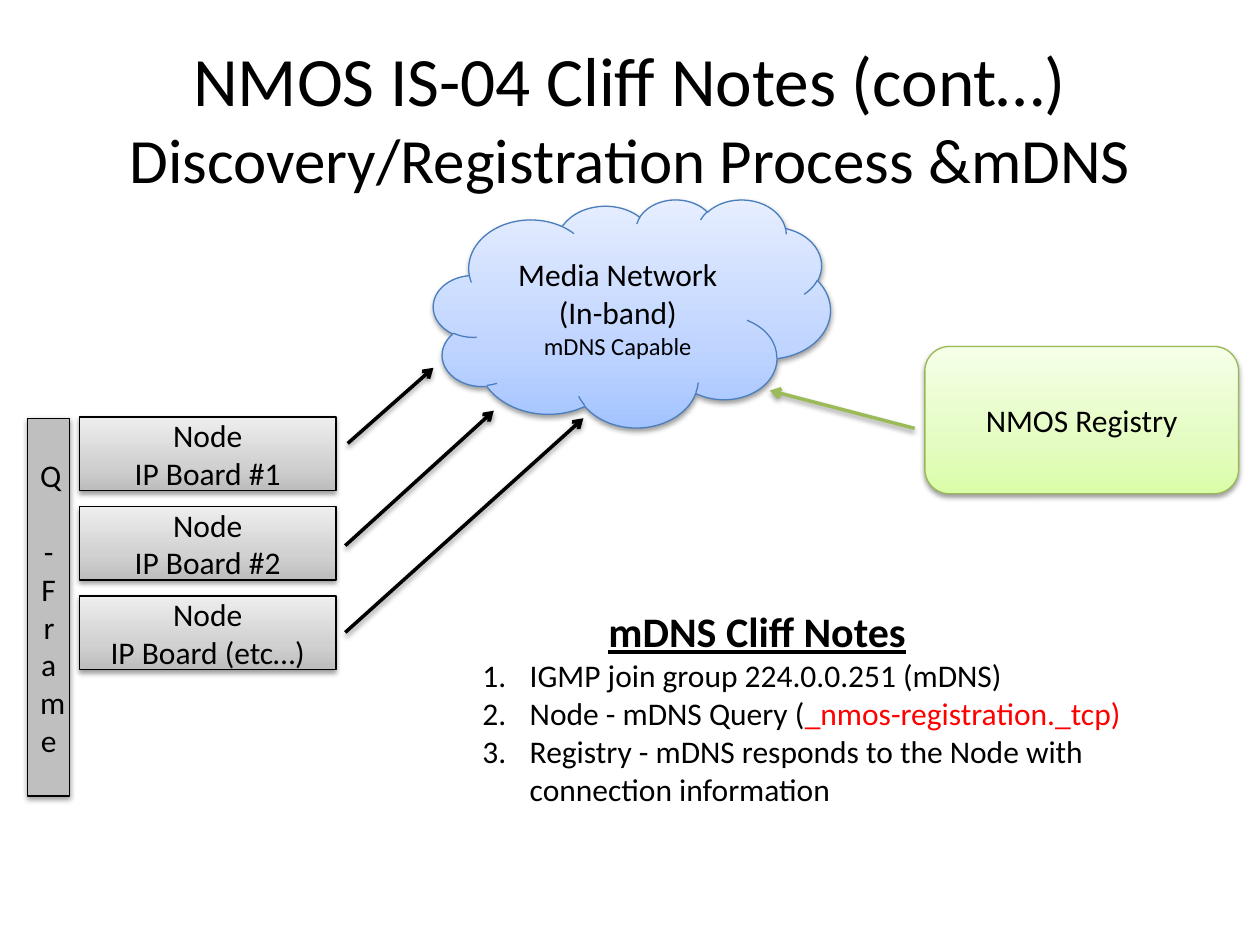
from pptx import Presentation
from pptx.dml.color import RGBColor
from pptx.enum.shapes import MSO_CONNECTOR, MSO_SHAPE as Shape
from pptx.enum.text import MSO_ANCHOR as Anchor, PP_ALIGN as Align
from pptx.oxml import parse_xml
from pptx.oxml.ns import nsdecls, qn
from pptx.util import Pt

FONT = "Calibri"
COLORS = {
    "text": "000000", "service": "FF0000", "frame": "BFBFBF",
    "node line": "000000", "network line": "4B7EBC",
    "registry line": "98B955", "registry arrow": "9BBB59",
}
# Gradient colours from bottom to top, at 0, 35 and 100 percent
GRADIENTS = {
    "node": ("BDBDBD", "D1D1D1", "EEEEEE"),
    "network": ("A4C4FF", "BFD4FF", "E6EEFF"),
    "registry": ("DAFDA7", "E4FCC2", "F5FFE7"),
}
STOPS = (0, 35, 100)

TITLE = [("NMOS IS-04 Cliff Notes (cont…)", 39.6),
         ("Discovery/Registration Process &mDNS", 36)]
FRAME = [("Q", 18), ("-Frame", 18)]
NODES = ["IP Board #1", "IP Board #2", "IP Board (etc…)"]
NETWORK = [("Media Network", 18), ("(In-band)", 18), ("mDNS Capable", 14)]
REGISTRY = [("NMOS Registry", 18)]
NOTES_HEADING = "mDNS Cliff Notes"
NOTES = [
    [("IGMP join group 224.0.0.251 (mDNS)", "text")],
    [("Node - mDNS Query (", "text"), ("_nmos-registration._tcp)", "service")],
    [("Registry - mDNS responds to the Node with connection information", "text")],
]
# Start x, start y, end x, end y, colour
ARROWS = [
    (198.7, 253.4, 247.7, 210.2, "node line"),
    (197.3, 311.8, 282.2, 234.7, "node line"),
    (197.3, 361.4, 333.4, 239, "node line"),
    (522.7, 244.8, 439.9, 223.2, "registry arrow"),
]
NODE_TOP, NODE_PITCH = 238.4, 51.1
NOTE_INDENT, HEADING_INDENT = 27, 72


def rgb(name):
    return RGBColor.from_string(COLORS[name])


def style_run(run, size, color="text"):
    run.font.name = FONT
    run.font.size = Pt(size)
    run.font.color.rgb = rgb(color)


def write_lines(frame, lines):
    """Write centred (text, size) lines, one paragraph each."""
    frame.word_wrap = True
    frame.vertical_anchor = Anchor.MIDDLE
    frame.text = "\n".join(text for text, _ in lines)
    for paragraph, (_, size) in zip(frame.paragraphs, lines):
        paragraph.alignment = Align.CENTER
        style_run(paragraph.runs[0], size)


def add_shadow(properties):
    for old in properties.findall(qn("a:effectLst")):
        properties.remove(old)
    properties.append(parse_xml(
        f'<a:effectLst {nsdecls("a")}><a:outerShdw blurRad="{Pt(3.1)}" '
        f'dist="{Pt(1.6)}" dir="5400000" rotWithShape="0"><a:srgbClr val="000000">'
        '<a:alpha val="38000"/></a:srgbClr></a:outerShdw></a:effectLst>'))


def gradient_fill(shape, gradient):
    stops = "".join(
        f'<a:gs pos="{stop * 1000}"><a:srgbClr val="{color}"/></a:gs>'
        for stop, color in zip(STOPS, GRADIENTS[gradient]))
    geometry = shape._element.spPr.find(qn("a:prstGeom"))
    geometry.addnext(parse_xml(
        f'<a:gradFill {nsdecls("a")} rotWithShape="1"><a:gsLst>{stops}</a:gsLst>'
        '<a:lin ang="16200000" scaled="0"/></a:gradFill>'))


def add_block(slide, kind, box, lines, line, gradient=None):
    block = slide.shapes.add_shape(kind, *map(Pt, box))
    if gradient:
        gradient_fill(block, gradient)
    else:
        block.fill.solid()
        block.fill.fore_color.rgb = rgb("frame")
    block.line.color.rgb = rgb(line)
    block.line.width = Pt(0.75)
    block.shadow.inherit = False
    add_shadow(block._element.spPr)
    write_lines(block.text_frame, lines)
    return block


def add_arrow(slide, start_x, start_y, end_x, end_y, color):
    arrow = slide.shapes.add_connector(
        MSO_CONNECTOR.STRAIGHT, Pt(start_x), Pt(start_y), Pt(end_x), Pt(end_y))
    arrow.line.color.rgb = rgb(color)
    arrow.line.width = Pt(2)
    arrow.line._get_or_add_ln().append(
        parse_xml(f'<a:tailEnd {nsdecls("a")} type="arrow"/>'))
    add_shadow(arrow._element.spPr)


def add_notes(slide):
    frame = slide.shapes.add_textbox(
        Pt(268.6), Pt(342.7), Pt(404.6), Pt(123.8)).text_frame
    frame.word_wrap = True
    heading = frame.paragraphs[0]
    heading.text = NOTES_HEADING
    heading._p.get_or_add_pPr().set("marL", str(Pt(HEADING_INDENT)))
    style_run(heading.runs[0], 24)
    heading.runs[0].font.bold = True
    heading.runs[0].font.underline = True
    for note in NOTES:
        paragraph = frame.add_paragraph()
        numbering = paragraph._p.get_or_add_pPr()
        numbering.set("marL", str(Pt(NOTE_INDENT)))
        numbering.set("indent", str(-Pt(NOTE_INDENT)))
        numbering.append(parse_xml(
            f'<a:buAutoNum {nsdecls("a")} type="arabicPeriod"/>'))
        for text, color in note:
            run = paragraph.add_run()
            run.text = text
            style_run(run, 18, color)


def main():
    deck = Presentation()
    deck.slide_width, deck.slide_height = Pt(720), Pt(540)
    slide = deck.slides.add_slide(deck.slide_layouts[6])

    title = slide.shapes.add_textbox(Pt(36), Pt(21.6), Pt(648), Pt(90))
    write_lines(title.text_frame, TITLE)

    frame = add_block(slide, Shape.RECTANGLE, (15.8, 239, 24, 216), FRAME, "node line")
    frame.text_frame.paragraphs[0].space_after = Pt(22)
    for row, board in enumerate(NODES):
        box = (45.4, NODE_TOP + row * NODE_PITCH, 146.6, 42)
        add_block(slide, Shape.RECTANGLE, box, [("Node", 18), (board, 18)],
                  "node line", "node")
    add_block(slide, Shape.CLOUD, (247.7, 113.8, 226.8, 130.3), NETWORK,
              "network line", "network")
    add_block(slide, Shape.ROUNDED_RECTANGLE, (528.5, 198, 179.3, 84.2), REGISTRY,
              "registry line", "registry")
    for arrow in ARROWS:
        add_arrow(slide, *arrow)
    add_notes(slide)
    deck.save("out.pptx")


if __name__ == "__main__":
    main()
